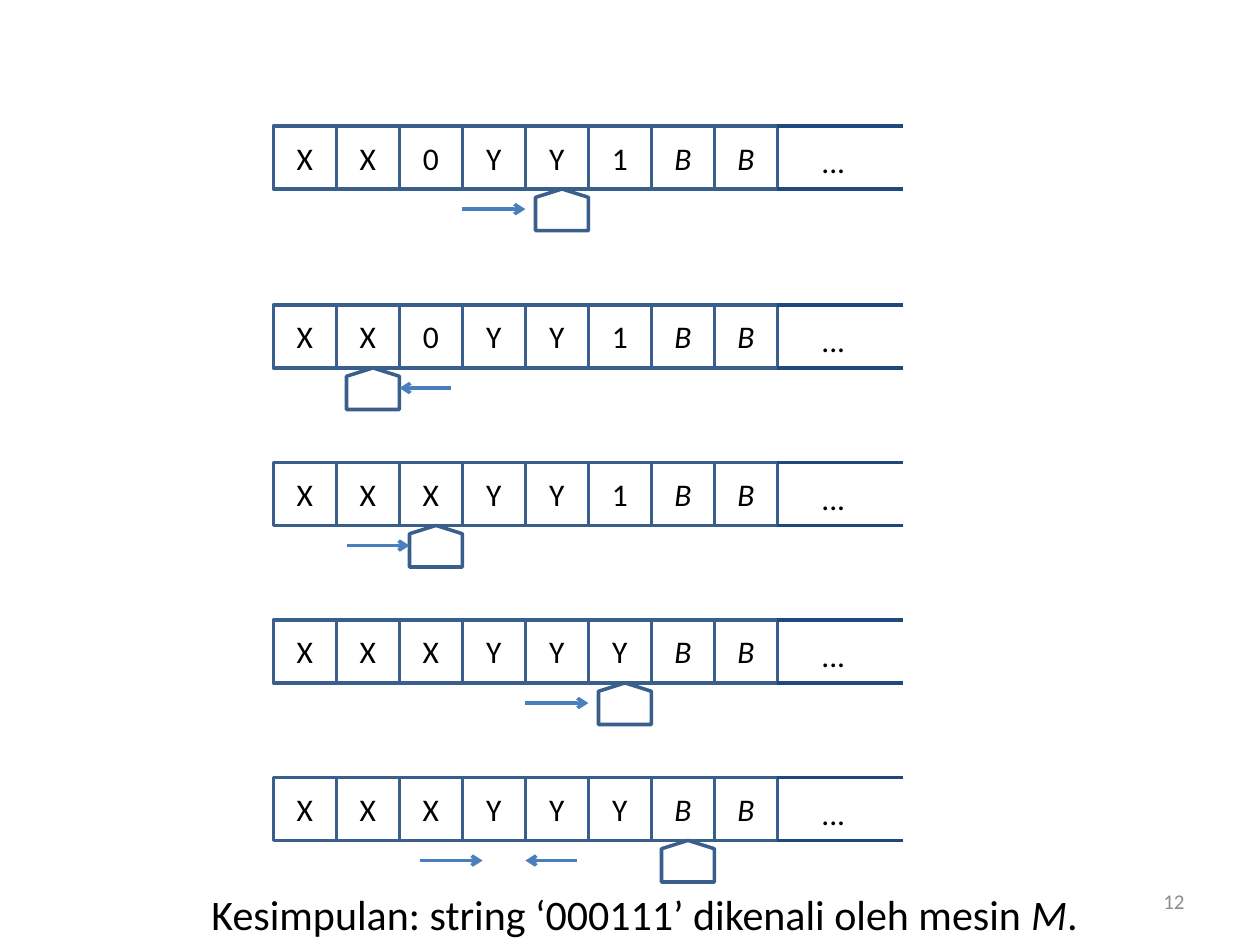
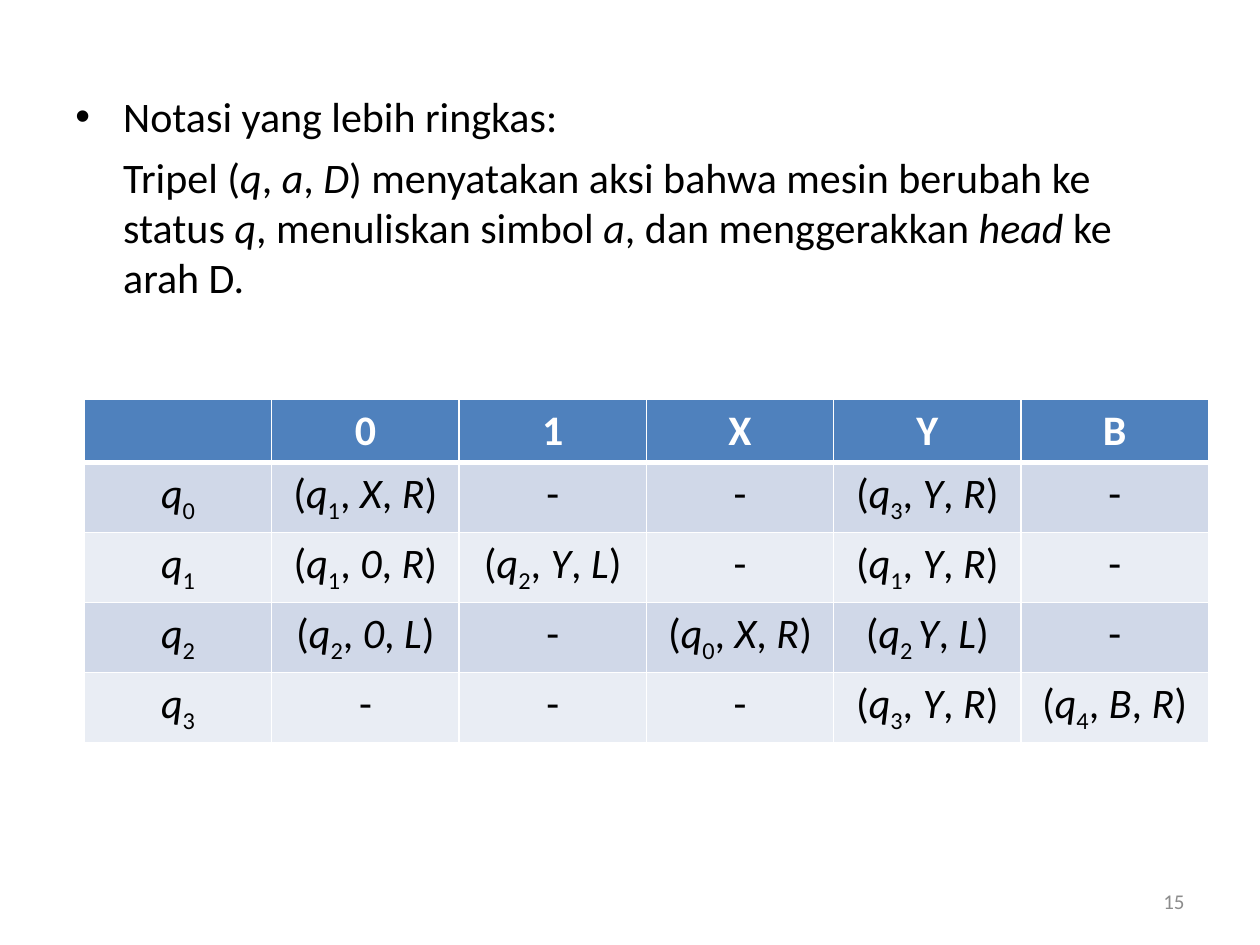
from lxml.etree import SubElement
from pptx import Presentation
from pptx.dml.color import RGBColor
from pptx.enum.shapes import MSO_CONNECTOR as CONN, MSO_SHAPE as SHAPE
from pptx.enum.text import MSO_ANCHOR as ANCHOR, PP_ALIGN as ALIGN
from pptx.oxml.ns import qn
from pptx.util import Inches, Pt

COLORS = {
    "text": "000000", "number": "8C8C8C", "white": "FFFFFF",
    "cell": "3A5F8C", "edge": "1F497D", "arrow": "4B7EBC",
    "header": "4F81BD", "odd": "D0D8E8", "even": "E9EDF4",
}
RGB = {name: RGBColor.from_string(value) for name, value in COLORS.items()}


def write(p, text, size, color="text", align=ALIGN.LEFT, bold=False):
    p.alignment = align
    for i, part in enumerate(text.split("*")):
        for j, piece in enumerate(part.split("_")):
            if not piece:
                continue
            r = p.add_run()
            r.text = piece
            fmt = {"name": "Calibri", "size": Pt(size), "bold": bold, "italic": i % 2 == 1}
            for key, value in fmt.items():
                setattr(r.font, key, value)
            r.font.color.rgb = RGB[color]
            if j % 2:
                r._r.get_or_add_rPr().set("baseline", "-25000")


def add_text(s, box, text, size, wrap=True, anchor=ANCHOR.TOP, **fmt):
    tf = s.shapes.add_textbox(*map(Inches, box)).text_frame
    tf.word_wrap = wrap
    tf.vertical_anchor = anchor
    write(tf.paragraphs[0], text, size, **fmt)
    return tf


prs = Presentation()
prs.slide_width, prs.slide_height = Inches(10), Inches(7.5)
tape_slide, table_slide = [prs.slides.add_slide(prs.slide_layouts[6]) for _ in range(2)]
for s, number in ((tape_slide, "12"), (table_slide, "15")):
    add_text(s, (7.17, 6.95, 2.33, 0.4), number, 12, anchor=ANCHOR.MIDDLE,
             color="number", align=ALIGN.RIGHT)

s = tape_slide
LEFT, CELL = 2.17, 0.5
TAPES = [
    (1, "XX0YY1BB", 4, [(3.67, 4.17)]),
    (2.42, "XX0YY1BB", 1, [(3.58, 3.17)]),
    (3.67, "XXXYY1BB", 2, [(2.75, 3.25)]),
    (4.92, "XXXYYYBB", 5, [(4.17, 4.67)]),
    (6.17, "XXXYYYBB", 6, [(3.33, 3.83), (4.58, 4.17)]),
]
for top, symbols, head, moves in TAPES:
    bottom = top + CELL
    end = LEFT + len(symbols) * CELL
    boxes = [(SHAPE.RECTANGLE, LEFT + i * CELL, top, CELL, CELL, symbol)
             for i, symbol in enumerate(symbols)]
    boxes.append((SHAPE.FLOWCHART_OFFPAGE_CONNECTOR, LEFT + head * CELL + 0.08, bottom, 0.42, 0.33, ""))
    for kind, x, y, w, h, symbol in boxes:
        sp = s.shapes.add_shape(kind, *map(Inches, (x, y, w, h)))
        sp.shadow.inherit = False
        sp.fill.background()
        sp.line.color.rgb = RGB["cell"]
        sp.line.width = Pt(2)
        if symbol:
            sp.text_frame.vertical_anchor = ANCHOR.MIDDLE
            write(sp.text_frame.paragraphs[0], "*B*" if symbol == "B" else symbol, 18,
                  align=ALIGN.CENTER)
        else:
            sp.rotation = 180

    lines = [(end, end + 1, y, "edge") for y in (top, bottom)]
    lines += [(start, stop, bottom + 0.16, "arrow") for start, stop in moves]
    for start, stop, y, color in lines:
        cx = s.shapes.add_connector(CONN.STRAIGHT, *map(Inches, (start, y, stop, y)))
        cx.line.color.rgb = RGB[color]
        cx.line.width = Pt(2)
        SubElement(cx._element.spPr, qn("a:effectLst"))
        if color == "arrow":
            SubElement(cx.line._get_or_add_ln(), qn("a:tailEnd"), type="arrow")

    add_text(s, (end + 0.25, top + 0.08, 0.39, 0.4), "...", 18, wrap=False)

add_text(s, (1.58, 7, 7.25, 0.5), "Kesimpulan: string ‘000111’ dikenali oleh mesin *M*.", 24)

s = table_slide
tf = add_text(s, (0.5, 0.67, 9, 6.03), "Notasi yang lebih ringkas:", 24)
p = tf.add_paragraph()
write(p, "Tripel (*q*, *a*, *D*) menyatakan aksi bahwa mesin berubah ke status *q*, "
      "menuliskan simbol *a*, dan menggerakkan *head *ke arah D.", 24)
p.space_before = Pt(5.8)
for p, indent in zip(tf.paragraphs, (-0.38, 0)):
    pPr = p._p.get_or_add_pPr()
    pPr.set("marL", str(Inches(0.38)))
    pPr.set("indent", str(Inches(indent)))
    if indent:
        SubElement(pPr, qn("a:buFont"), typeface="Arial")
        SubElement(pPr, qn("a:buChar"), char="•")

ROWS = [
    ["", "0", "1", "X", "Y", "B"],
    ["*q*_0_", "(*q*_1_, *X*, *R*)", "-", "-", "(*q*_3_, *Y*, *R*)", "-"],
    ["*q*_1_", "(*q*_1_, *0*, *R*)", "(*q*_2_, *Y*, *L*)", "-", "(*q*_1_, *Y*, *R*)", "-"],
    ["*q*_2_", "(*q*_2_, *0*, *L*)", "-", "(*q*_0_, *X*, *R*)", "(*q*_2 _*Y*, *L*)", "-"],
    ["*q*_3_", "-", "-", "-", "(*q*_3_, *Y*, *R*)", "(*q*_4_, *B*, *R*)"],
]
table = s.shapes.add_table(len(ROWS), len(ROWS[0]), *map(Inches, (0.67, 3.17, 8.92, 2.7))).table
for i, row in enumerate(ROWS):
    table.rows[i].height = Inches(0.55 if i else 0.5)
    for j, text in enumerate(row):
        cell = table.cell(i, j)
        tcPr = cell._tc.get_or_add_tcPr()
        for side in "LRTB":
            thick = (i, side) in ((0, "B"), (1, "T"))
            ln = SubElement(tcPr, qn(f"a:ln{side}"), w=str(Pt(3 if thick else 1)))
            SubElement(SubElement(ln, qn("a:solidFill")), qn("a:srgbClr"), val=COLORS["white"])
        cell.fill.solid()
        cell.fill.fore_color.rgb = RGB["header" if i == 0 else "odd" if i % 2 else "even"]
        write(cell.text_frame.paragraphs[0], text, 24, "text" if i else "white",
              ALIGN.CENTER, bold=i == 0)

prs.save("out.pptx")
